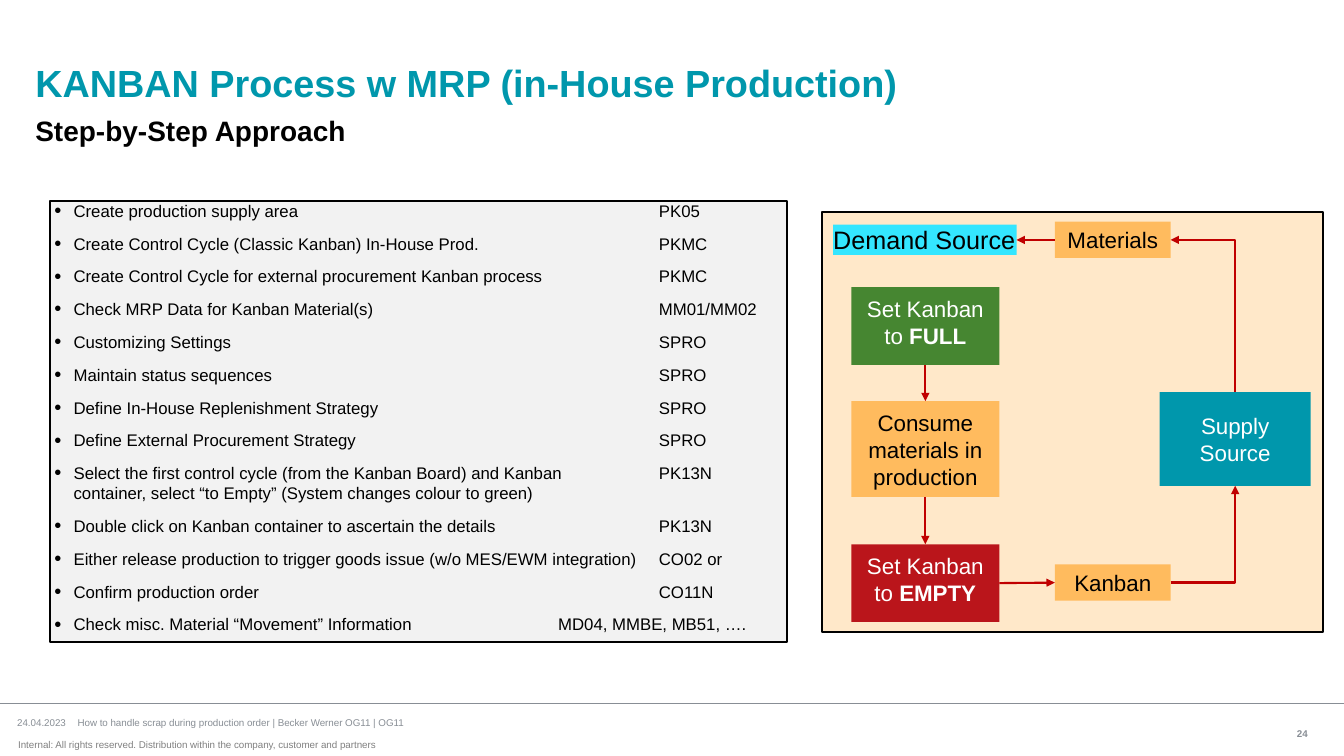
from lxml.etree import SubElement
from pptx import Presentation
from pptx.dml.color import RGBColor
from pptx.enum.shapes import MSO_CONNECTOR, MSO_SHAPE
from pptx.enum.text import MSO_ANCHOR, MSO_AUTO_SIZE, PP_ALIGN
from pptx.oxml.ns import qn
from pptx.util import Inches, Pt

BLACK, WHITE, GREY = "000000", "FFFFFF", "888E95"
TEAL, ORANGE, RED = "0097AC", "FFBB5E", "C00000"


def color(target, value):
    """Give a fill or a font a solid colour."""
    if hasattr(target, "solid"):
        target.solid()
        target = target.fore_color
    else:
        target = target.color
    target.rgb = RGBColor.from_string(value)


def write(shape, lines, size=16, ink=BLACK, bold=False, bold_end="", align=PP_ALIGN.LEFT,
          anchor=MSO_ANCHOR.TOP, margins=(0, 0, 0, 0), wrap=True, after=0,
          bullet=False, tab=None):
    """Fill a shape with paragraphs; each line is a text or a (text, tab) pair."""
    frame = shape.text_frame
    frame.auto_size = MSO_AUTO_SIZE.NONE
    frame.word_wrap = wrap
    frame.vertical_anchor = anchor
    (frame.margin_left, frame.margin_top,
     frame.margin_right, frame.margin_bottom) = [Inches(margin) for margin in margins]
    for index, line in enumerate(lines):
        text, stop = line if isinstance(line, tuple) else (line, tab)
        paragraph = frame.add_paragraph() if index else frame.paragraphs[0]
        paragraph.text = text
        paragraph.alignment = align
        paragraph.line_spacing = 1.0
        paragraph.space_before = Pt(0)
        paragraph.space_after = Pt(after)
        properties = paragraph._p.get_or_add_pPr()
        if bullet:
            properties.set("marL", str(Inches(0.19)))
            properties.set("indent", str(-Inches(0.19)))
            SubElement(properties, qn("a:buSzPct"), val="120000")
            SubElement(properties, qn("a:buFont"), typeface="Arial")
            SubElement(properties, qn("a:buChar"), char="•")
        if stop:
            tabs = SubElement(properties, qn("a:tabLst"))
            SubElement(tabs, qn("a:tab"), pos=str(Inches(stop)), algn="l")
        if bold_end:
            paragraph.add_run().text = bold_end
        for run in paragraph.runs:
            run.font.name = "Arial"
            run.font.size = Pt(size)
            run.font.bold = bold or run.text == bold_end
            color(run.font, ink)
        for line_break in paragraph._p.findall(qn("a:br")):
            SubElement(line_break, qn("a:rPr"), sz=str(size * 100))


presentation = Presentation()
presentation.slide_width, presentation.slide_height = Inches(13.34), Inches(7.5)
slide = presentation.slides.add_slide(presentation.slide_layouts[5])
shapes = slide.shapes

# Title
title = shapes.title
title.left, title.top = Inches(0.35), Inches(0.59)
title.width, title.height = Inches(10.6), Inches(0.45)
write(title, ["KANBAN Process w MRP (in-House Production)"], size=27, ink=TEAL, bold=True)

# Subtitle and footer texts
labels = [
    ((0.35, 1.13, 10.61, 0.4), "Step-by-Step Approach", dict(size=20, bold=True)),
    ((0.18, 7.28, 3.92, 0.22),
     "Internal: All rights reserved. Distribution within the company, customer and partners",
     dict(size=7, ink="808080", anchor=MSO_ANCHOR.MIDDLE)),
    ((0.17, 7.11, 7.51, 0.12),
     "24.04.2023\tHow to handle scrap during production order | Becker Werner OG11 | OG11",
     dict(size=7, ink=GREY, anchor=MSO_ANCHOR.MIDDLE, tab=0.6)),
    ((12.3, 7.22, 0.68, 0.12), "24",
     dict(size=7, ink=GREY, bold=True, align=PP_ALIGN.RIGHT, anchor=MSO_ANCHOR.MIDDLE)),
]
for place, text, style in labels:
    write(shapes.add_textbox(*map(Inches, place)), [text], **style)

# Panels behind the step list and the process diagram
panels = []
for place, fill in [((0.5, 1.99, 7.31, 4.38), "F2F2F2"), ((8.16, 2.1, 4.97, 4.17), "FFE8C9")]:
    panel = shapes.add_shape(MSO_SHAPE.RECTANGLE, *map(Inches, place))
    panel.shadow.inherit = False
    color(panel.fill, fill)
    color(panel.line.fill, BLACK)
    panel.line.width = Pt(1.5)
    panels.append(panel)

# Steps with their transaction codes
steps = [
    "Create production supply area\tPK05",
    "Create Control Cycle (Classic Kanban) In-House Prod.\tPKMC",
    "Create Control Cycle for external procurement Kanban process\tPKMC",
    "Check MRP Data for Kanban Material(s)\tMM01/MM02",
    "Customizing Settings\tSPRO",
    "Maintain status sequences\tSPRO",
    "Define In-House Replenishment Strategy\tSPRO",
    "Define External Procurement Strategy\tSPRO",
    "Select the first control cycle (from the Kanban Board) and Kanban\tPK13N\v"
    "container, select “to Empty” (System changes colour to green)",
    "Double click on Kanban container to ascertain the details\tPK13N",
    "Either release production to trigger goods issue (w/o MES/EWM integration)\tCO02 or",
    "Confirm production order\tCO11N",
    ("Check misc. Material “Movement” Information\tMD04, MMBE, MB51, ….", 5),
]
write(panels[0], steps, size=12, after=9, margins=(0.04, 0, 0.04, 0.03), bullet=True, tab=6)

# Process boxes
boxes = [
    ("materials", (10.47, 2.2, 1.15, 0.36), ORANGE, BLACK, "Materials", "", MSO_ANCHOR.MIDDLE),
    ("supply", (11.51, 3.89, 1.5, 0.93), TEAL, WHITE, "Supply Source", "", MSO_ANCHOR.MIDDLE),
    ("empty", (8.45, 5.4, 1.47, 0.77), "BA151B", WHITE, "Set Kanban to ", "EMPTY", MSO_ANCHOR.TOP),
    ("kanban", (10.47, 5.6, 1.15, 0.36), ORANGE, BLACK, "Kanban", "", MSO_ANCHOR.MIDDLE),
    ("consume", (8.45, 3.98, 1.47, 0.95), ORANGE, BLACK, "Consume materials in production", "",
     MSO_ANCHOR.TOP),
    ("full", (8.45, 2.85, 1.47, 0.77), "468631", WHITE, "Set Kanban to ", "FULL", MSO_ANCHOR.TOP),
    ("demand", (8.27, 2.23, 1.82, 0.3), "34E6FF", BLACK, "Demand Source", "", MSO_ANCHOR.TOP),
]
process = {}
for name, place, fill, ink, text, bold_end, anchor in boxes:
    box = shapes.add_shape(MSO_SHAPE.RECTANGLE, *map(Inches, place))
    box.shadow.inherit = False
    color(box.fill, fill)
    box.line.fill.background()
    if name == "demand":
        write(box, [text], size=18, wrap=False)
    else:
        write(box, [text], ink=ink, bold_end=bold_end, align=PP_ALIGN.CENTER, anchor=anchor,
              margins=(0.08, 0.08, 0.08, 0.08))
    process[name] = box

# Arrows between the boxes, joined at their sides
TOP, LEFT, BOTTOM, RIGHT = range(4)
arrows = [
    ("empty", RIGHT, "kanban", LEFT, "line", "tailEnd"),
    ("kanban", RIGHT, "supply", BOTTOM, "bentConnector2", "tailEnd"),
    ("materials", RIGHT, "supply", TOP, "bentConnector2", "headEnd"),
    ("full", BOTTOM, "consume", TOP, "line", "tailEnd"),
    ("consume", BOTTOM, "empty", TOP, "line", "tailEnd"),
    ("materials", LEFT, "demand", RIGHT, "line", "tailEnd"),
]
for start, start_side, end, end_side, geometry, arrow_end in arrows:
    kind = MSO_CONNECTOR.STRAIGHT if geometry == "line" else MSO_CONNECTOR.ELBOW
    arrow = shapes.add_connector(kind, 0, 0, 0, 0)
    arrow.begin_connect(process[start], start_side)
    arrow.end_connect(process[end], end_side)
    color(arrow.line.fill, RED)
    arrow.line.width = Pt(1.5)
    properties = arrow._element.spPr
    properties.find(qn("a:prstGeom")).set("prst", geometry)
    SubElement(properties.find(qn("a:ln")), qn("a:" + arrow_end), type="triangle")
    SubElement(properties, qn("a:effectLst"))

# Footer rule
rule = shapes.add_connector(MSO_CONNECTOR.STRAIGHT, 0, Inches(6.98), Inches(13.34), Inches(6.98))
color(rule.line.fill, GREY)
rule.line.width = Pt(1)
SubElement(rule._element.spPr, qn("a:effectLst"))

presentation.save("out.pptx")
